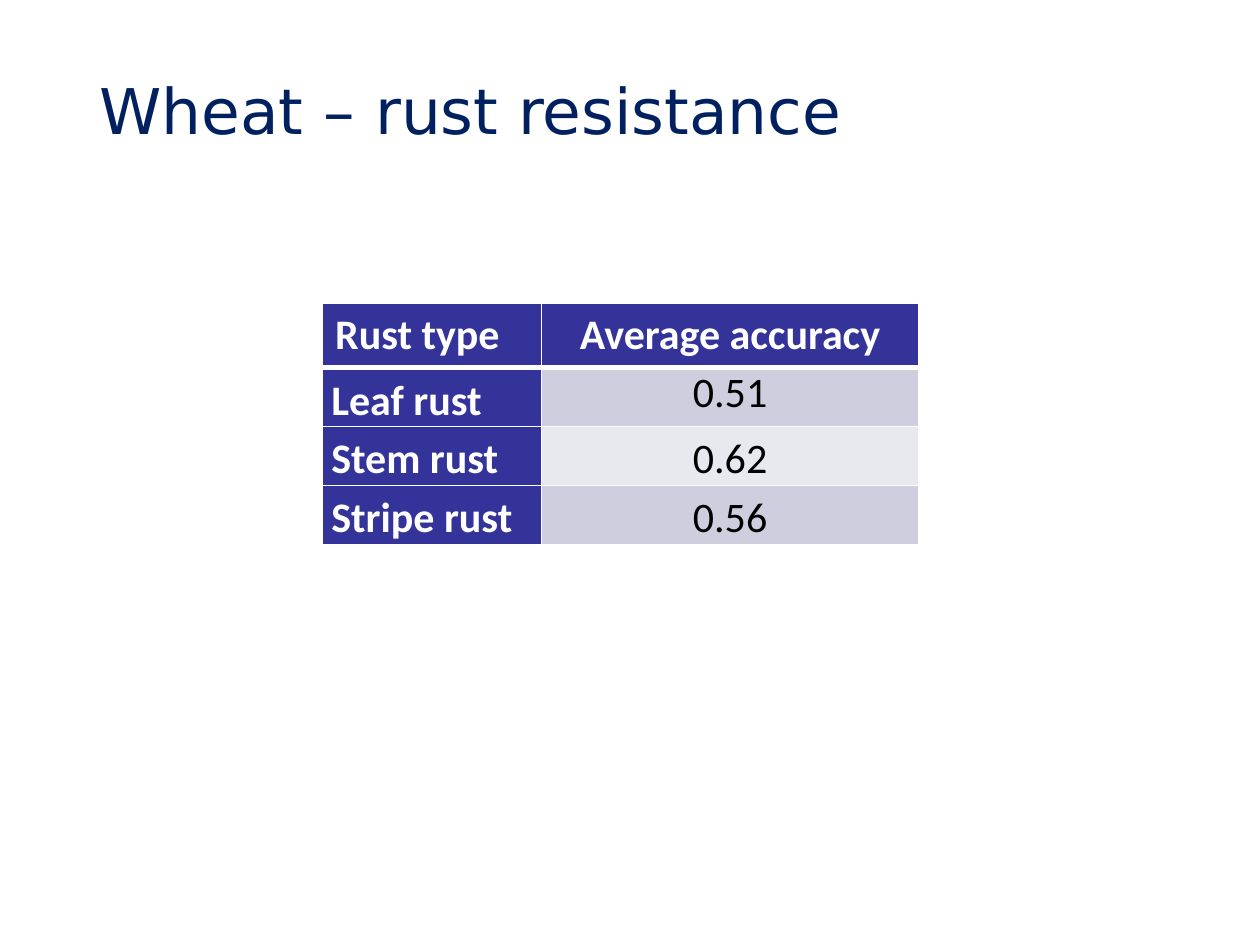
from lxml.etree import SubElement
from pptx import Presentation
from pptx.dml.color import RGBColor as RGB
from pptx.enum.text import MSO_ANCHOR as Anchor, MSO_AUTO_SIZE as AutoSize, PP_ALIGN as Align
from pptx.oxml.ns import qn
from pptx.util import Inches, Pt

# Content
TITLE = "Wheat – rust resistance"
ACCURACY = [
    ("Rust type", "Average accuracy"),
    ("Leaf rust", "0.51"),
    ("Stem rust", "0.62"),
    ("Stripe rust", "0.56"),
]

# Look
COLORS = {"title": "002060", "head": "333399", "odd": "CECEDE", "even": "E8E8EF",
          "white": "FFFFFF", "black": "000000"}
TITLE_FONT = {"name": "DejaVu Sans", "size": Pt(36), "bold": False}
CELL_FONT = {"name": "Calibri", "size": Pt(24)}
BODY_MARGINS = {"margin_left": Inches(0.07), "margin_right": Inches(0.07),
                "margin_top": 0, "margin_bottom": 0}

# Layout in inches
SLIDE = (10, 7.5)
TITLE_BOX = (0.69, 0.66, 9.15, 1.41)
TABLE_LEFT, TABLE_TOP = 2.56, 2.41
COLUMNS = (1.74, 2.99)
HEAD_ROW, BODY_ROW = 0.5, 0.28


def apply(target, values):
    for key, value in values.items():
        setattr(target, key, value)


def write(frame, text, font, color, align, spacing):
    frame.text = text
    line = frame.paragraphs[0]
    apply(line, {"alignment": align, "line_spacing": spacing})
    run_font = line.runs[0].font
    apply(run_font, font)
    run_font.color.rgb = RGB.from_string(COLORS[color])


def add_borders(cell, widths):
    """Borders precede the fill in the cell properties, so call this first."""
    properties = cell._tc.get_or_add_tcPr()
    for side, points in widths.items():
        border = SubElement(properties, qn(f"a:ln{side}"), w=str(Pt(points)))
        fill = SubElement(border, qn("a:solidFill"))
        SubElement(fill, qn("a:srgbClr"), val=COLORS["white"])


def add_title(slide):
    title = slide.shapes.title
    places = (Inches(length) for length in TITLE_BOX)
    apply(title, dict(zip(("left", "top", "width", "height"), places)))
    frame = title.text_frame
    apply(frame, {"word_wrap": True, "vertical_anchor": Anchor.TOP,
                  "auto_size": AutoSize.NONE})
    write(frame, TITLE, TITLE_FONT, "title", Align.LEFT, 0.75)


def add_accuracy_table(slide):
    heights = [HEAD_ROW] + [BODY_ROW] * (len(ACCURACY) - 1)
    box = (TABLE_LEFT, TABLE_TOP, sum(COLUMNS), sum(heights))
    table = slide.shapes.add_table(len(ACCURACY), len(COLUMNS),
                                   *(Inches(length) for length in box)).table
    table.first_col = True
    for column, width in zip(table.columns, COLUMNS):
        column.width = Inches(width)
    for row, height in zip(table.rows, heights):
        row.height = Inches(height)

    for r, texts in enumerate(ACCURACY):
        for c, text in enumerate(texts):
            cell = table.cell(r, c)
            is_head = r == 0 or c == 0
            add_borders(cell, {"L": 1, "R": 1, "T": 1, "B": 3 if r == 0 else 1})
            band = "head" if is_head else "odd" if r % 2 else "even"
            cell.fill.solid()
            cell.fill.fore_color.rgb = RGB.from_string(COLORS[band])
            if r > 0:
                apply(cell, BODY_MARGINS)
            # The header and the first value keep single line spacing
            spacing = None if r == 0 or (r, c) == (1, 1) else 1.15
            write(cell.text_frame, text, {**CELL_FONT, "bold": is_head},
                  "white" if is_head else "black",
                  Align.CENTER if c else Align.LEFT, spacing)


def main():
    deck = Presentation()
    deck.slide_width, deck.slide_height = (Inches(side) for side in SLIDE)
    slide = deck.slides.add_slide(deck.slide_layouts[5])
    add_accuracy_table(slide)
    add_title(slide)
    deck.save("out.pptx")


if __name__ == "__main__":
    main()
